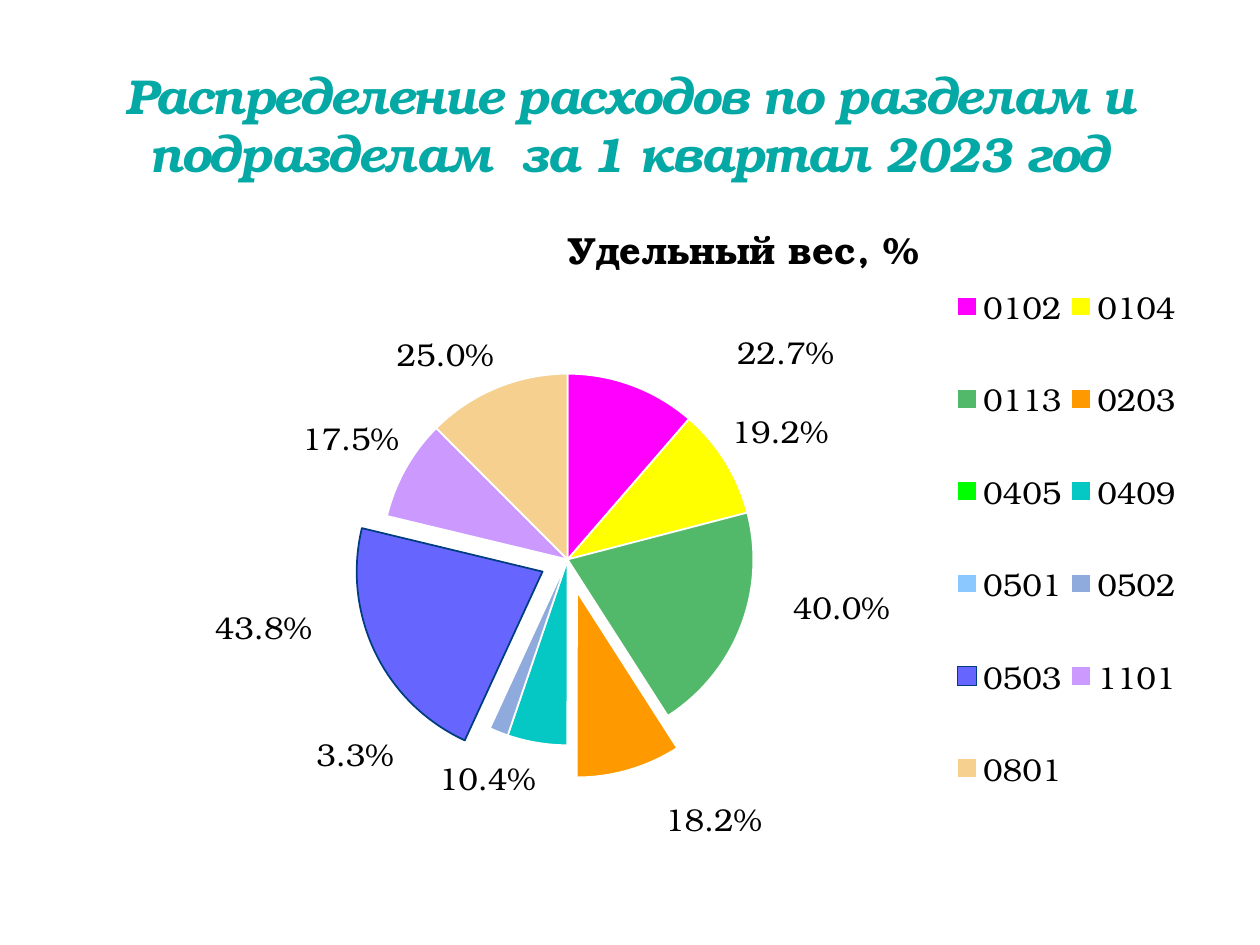
from lxml import etree
from pptx import Presentation
from pptx.chart.data import CategoryChartData
from pptx.dml.color import RGBColor
from pptx.enum.chart import XL_CHART_TYPE, XL_LABEL_POSITION, XL_LEGEND_POSITION
from pptx.enum.text import MSO_ANCHOR, PP_ALIGN
from pptx.oxml.ns import qn
from pptx.util import Emu, Pt

PX = 914400 // 126
FONT = "TeX Gyre Bonum"
PIE = XL_CHART_TYPE.PIE
RIGHT = XL_LEGEND_POSITION.RIGHT
OUTSIDE = XL_LABEL_POSITION.OUTSIDE_END
BLACK = RGBColor(0, 0, 0)
WHITE = RGBColor(255, 255, 255)
TEAL = RGBColor(0x04, 0xA8, 0xA4)
NAVY = RGBColor(0x00, 0x3C, 0x80)

# Category, share, colour, explosion in %, label shift (fractions of the chart)
SLICES = [
    ("0102", 0.227, "FF00FF", 0, (0.09, -0.01)),
    ("0104", 0.192, "FFFF00", 0, (0, -0.01)),
    ("0113", 0.4, "52B96A", 0, (0.04, -0.07)),
    ("0203", 0.182, "FF9900", 18, (0.03, 0.04)),
    ("0405", 0, "00FF00", 0, None),
    ("0409", 0.104, "05C8C4", 0, (0, 0.01)),
    ("0501", 0, "8AC8FF", 0, None),
    ("0502", 0.033, "8FAADC", 0, (-0.09, -0.01)),
    ("0503", 0.438, "6666FF", 15, (-0.05, -0.08)),
    ("1101", 0.175, "CC99FF", 0, (0, -0.01)),
    ("0801", 0.25, "F6D08F", 0, (0, -0.01)),
]


def add_values(parent, **values):
    for tag, value in values.items():
        etree.SubElement(parent, qn("c:" + tag)).set("val", str(value))


def set_layout(parent, index, **values):
    for old in parent.findall(qn("c:layout")):
        parent.remove(old)
    layout = etree.Element(qn("c:layout"))
    add_values(etree.SubElement(layout, qn("c:manualLayout")), **values)
    parent.insert(index, layout)


presentation = Presentation()
presentation.slide_width = Emu(1260 * PX)
presentation.slide_height = Emu(945 * PX)
slide = presentation.slides.add_slide(presentation.slide_layouts[6])

# Heading
heading = slide.shapes.add_textbox(63 * PX, 21 * PX, 1134 * PX, 168 * PX)
text_frame = heading.text_frame
text_frame.word_wrap = True
text_frame.vertical_anchor = MSO_ANCHOR.BOTTOM
text_frame.text = "Распределение расходов по разделам и подразделам  за 1 квартал 2023 год"
paragraph = text_frame.paragraphs[0]
paragraph.alignment = PP_ALIGN.CENTER
run = paragraph.runs[0]
run.font.name = FONT
run.font.size = Pt(28)
run.font.bold = run.font.italic = True
run.font.color.rgb = TEAL
run.font._element.set("spc", "-100")

# Pie chart
chart_data = CategoryChartData(number_format="0.0%")
chart_data.categories = [row[0] for row in SLICES]
chart_data.add_series("Удельный вес, %", [row[1] for row in SLICES])
chart = slide.shapes.add_chart(
    PIE, 63 * PX, 210 * PX, 1134 * PX, 630 * PX, chart_data).chart
chart.font.name = FONT
chart.font.size = Pt(18)
chart.font.color.rgb = BLACK
plot = chart.plots[0]
plot.vary_by_categories = True

# Chart title
chart.has_title = True
title_frame = chart.chart_title.text_frame
title_frame.text = "Удельный вес, %"
title_font = title_frame.paragraphs[0].runs[0].font
title_font.name = FONT
title_font.size = Pt(21.6)
title_font.bold = True
title_font.color.rgb = BLACK
set_layout(chart.chart_title._element, 1,
           xMode="edge", yMode="edge", x=0.44, y=0)
chart.chart_title.include_in_layout = False

# Legend in two columns
chart.has_legend = True
legend = chart.legend
legend.position = RIGHT
legend.include_in_layout = False
legend.font.name = FONT
legend.font.size = Pt(18)
legend.font.color.rgb = BLACK
set_layout(legend._element, 1,
           xMode="edge", yMode="edge", x=0.78, y=0.04, w=0.21, h=0.96)

# Place of the pie
set_layout(chart._chartSpace.chart.plotArea, 0, layoutTarget="inner",
           xMode="edge", yMode="edge", x=0.28, y=0.26, w=0.33, h=0.59)

# Labels
plot.has_data_labels = True
series = plot.series[0]
labels = series.data_labels
labels.show_value = True
labels.number_format = "0.0%"
labels.number_format_is_linked = False
labels.position = OUTSIDE
labels.font.name = FONT
labels.font.size = Pt(18)
labels.font.color.rgb = BLACK
for leader in labels._element.findall(qn("c:showLeaderLines")):
    leader.set("val", "0")

# Slices, each with its label shift
for index, (category, share, color, explosion, shift) in enumerate(SLICES):
    point = series.points[index]
    point.format.fill.solid()
    point.format.fill.fore_color.rgb = RGBColor.from_string(color)
    point.format.line.color.rgb = NAVY if category == "0503" else WHITE
    point.format.line.width = Pt(1)
    if explosion:
        data_point = series._element.findall(qn("c:dPt"))[index]
        exploded = etree.Element(qn("c:explosion"))
        exploded.set("val", str(explosion))
        data_point.find(qn("c:spPr")).addprevious(exploded)

    label = etree.Element(qn("c:dLbl"))
    add_values(label, idx=index)
    if shift is None:
        add_values(label, delete=1)
    else:
        set_layout(label, 1, x=shift[0], y=shift[1])
        add_values(label, dLblPos="outEnd", showLegendKey=0, showVal=1,
                   showCatName=0, showSerName=0, showPercent=0, showBubbleSize=0)
    labels._element.insert(index, label)

presentation.save("out.pptx")
